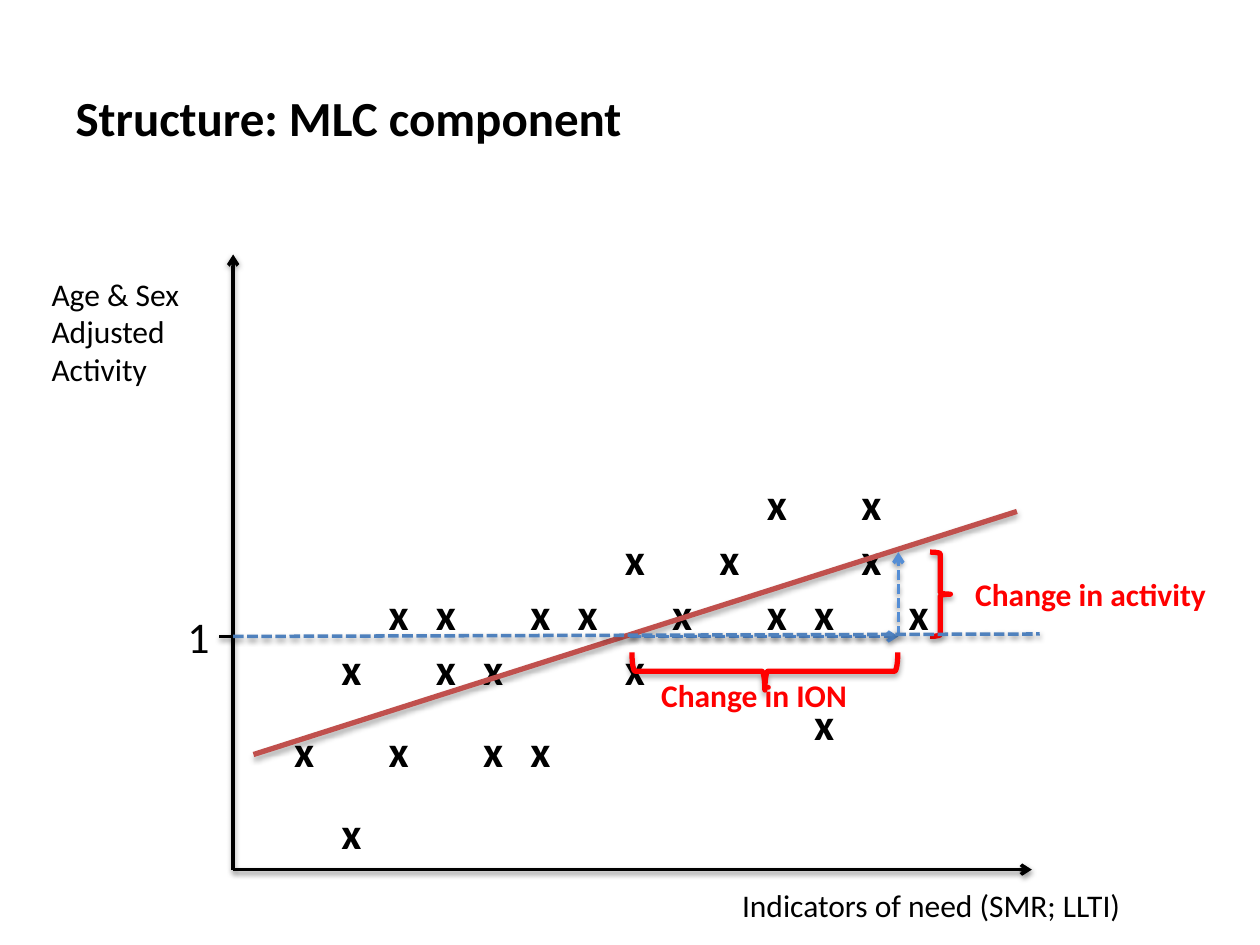
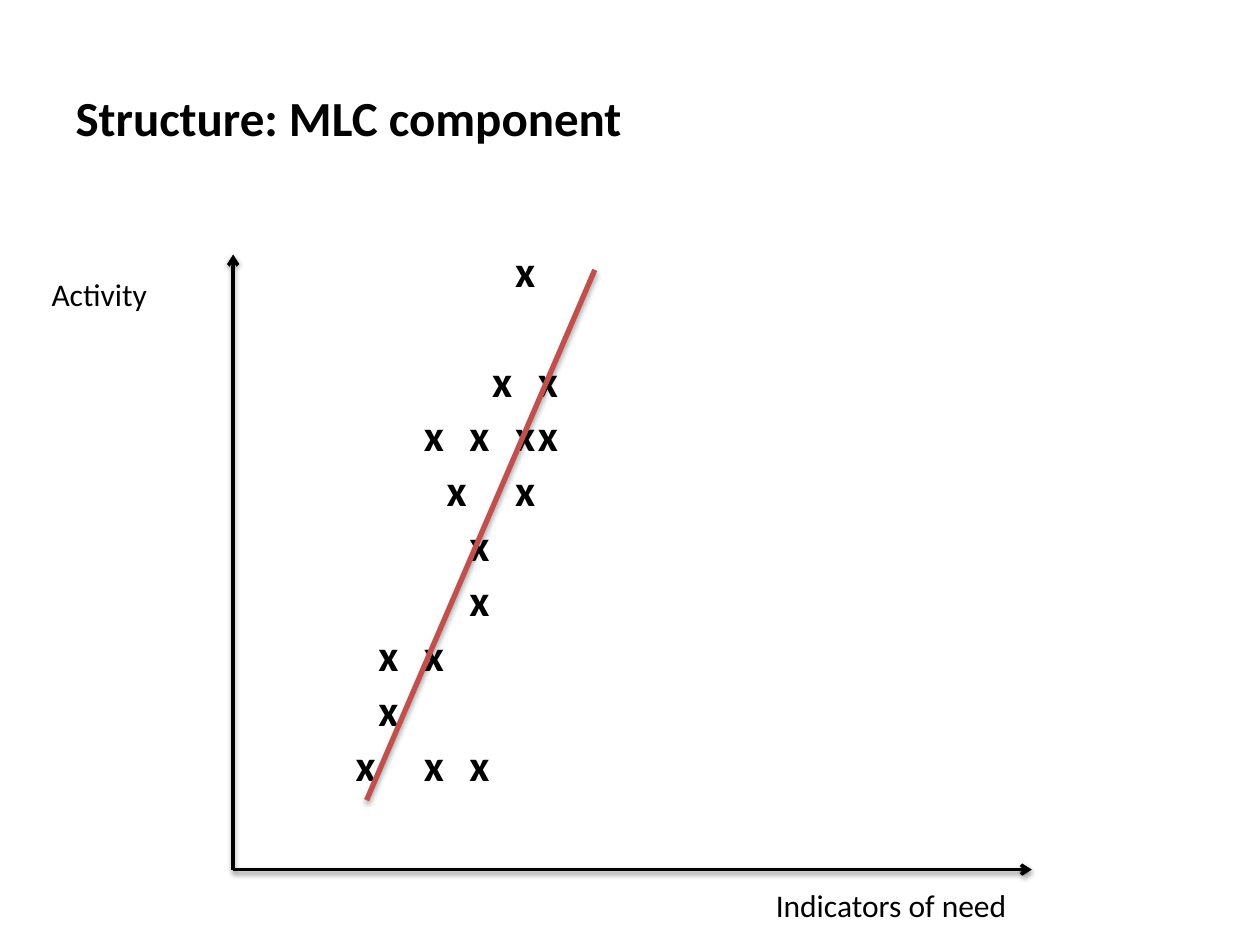
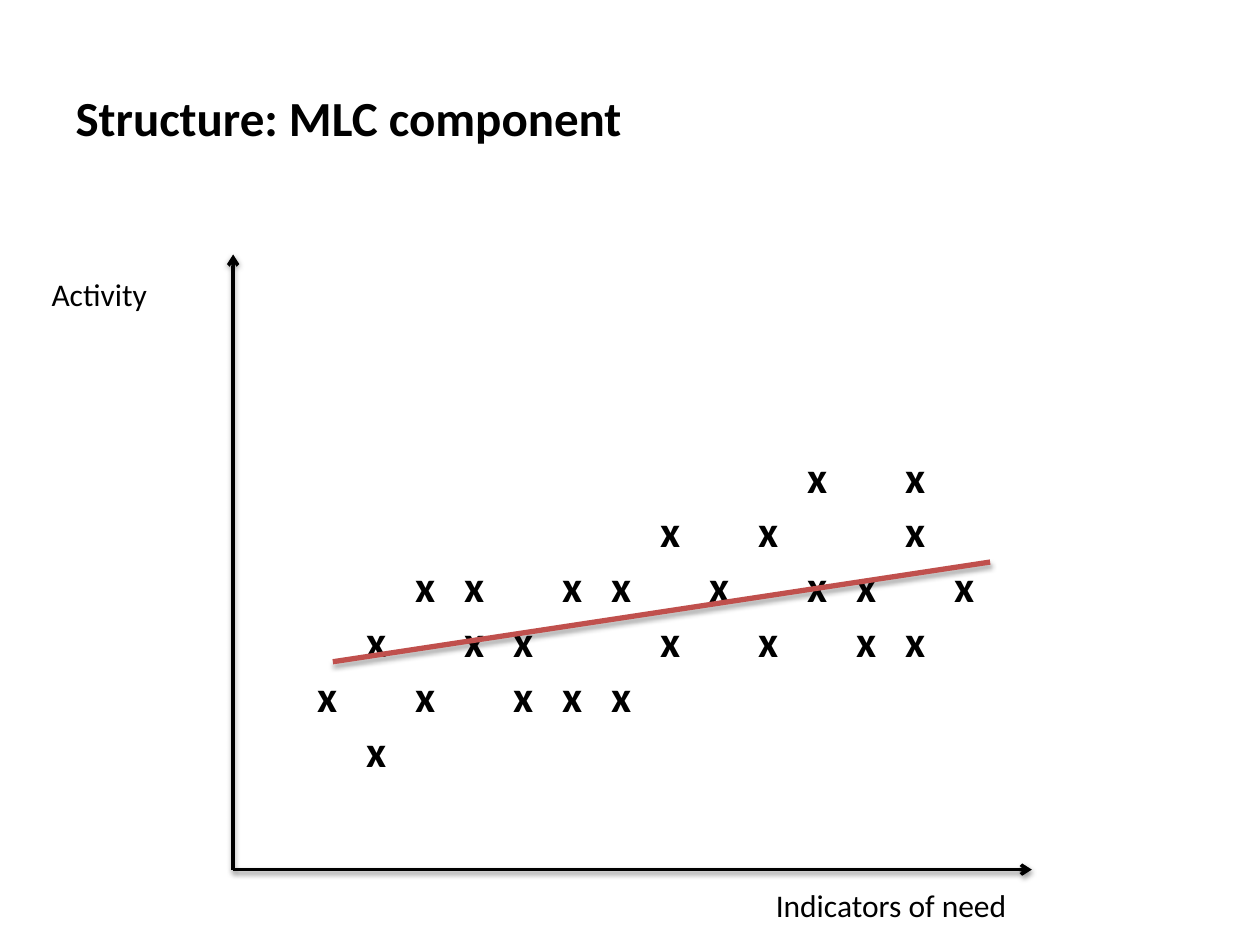
from lxml.etree import SubElement
from pptx import Presentation
from pptx.dml.color import RGBColor
from pptx.enum.dml import MSO_LINE
from pptx.enum.shapes import MSO_CONNECTOR, MSO_SHAPE
from pptx.enum.text import MSO_ANCHOR, MSO_AUTO_SIZE, PP_ALIGN
from pptx.oxml.ns import qn
from pptx.util import Cm, Pt

HUES = {"ink": "000000", "trend": "C0504D", "mean": "4F81BD",
        "shift": "558ED5", "note": "FF0000"}
FONT = "Calibri"
PLAIN = "{2D5ABB26-0587-4C30-8999-92F81FD0307C}"  # table style without grid
ROW = 1.1  # height of one text row in a scatter, cm

# Axes, cm
LEFT, BASE = 4.7, 17.53
TOP, RIGHT = 5.13, 20.8


class Deck:
    """Holds the style and the current slide."""

    def __init__(self):
        self.show = Presentation()
        self.show.slide_width, self.show.slide_height = Cm(25.4), Cm(19.05)
        self.slide = None

    def page(self, title):
        self.slide = self.show.slides.add_slide(self.show.slide_layouts[5])
        head = self.slide.shapes.title
        head.left, head.top, head.width, head.height = map(
            Cm, (1.27, 0.76, 22.86, 3.18))
        head.text_frame.vertical_anchor = MSO_ANCHOR.MIDDLE
        self.words(head.text_frame, title, 28, bold=True, align=PP_ALIGN.LEFT)

    def words(self, frame, text, size, hue="ink", bold=False, align=None):
        para = frame.paragraphs[0]
        para.alignment = align
        run = para.add_run()
        run.text = text
        font = run.font
        font.name, font.size, font.bold = FONT, Pt(size), bold
        font.color.rgb = RGBColor.from_string(HUES[hue])

    def label(self, text, box, size=18, hue="ink", bold=False):
        frame = self.slide.shapes.add_textbox(*map(Cm, box)).text_frame
        frame.word_wrap = True
        frame.auto_size = MSO_AUTO_SIZE.SHAPE_TO_FIT_TEXT
        self.words(frame, text, size, hue, bold)

    def stroke(self, shape, hue, width):
        """Set line and soft shadow; heavy lines get a deeper one."""
        shape.line.color.rgb = RGBColor.from_string(HUES[hue])
        shape.line.width = Pt(width)
        drop, alpha = (1.8, 35) if width > 2 else (1.6, 38)
        glow = SubElement(shape.element.spPr, qn("a:effectLst"))
        cast = SubElement(glow, qn("a:outerShdw"), blurRad=str(Pt(3.1)),
                          dist=str(Pt(drop)), dir="5400000", rotWithShape="0")
        tone = SubElement(cast, qn("a:srgbClr"), val=HUES["ink"])
        SubElement(tone, qn("a:alpha"), val=str(alpha * 1000))

    def line(self, start, end, hue="ink", width=2, dash=False, arrow=False):
        line = self.slide.shapes.add_connector(
            MSO_CONNECTOR.STRAIGHT, *map(Cm, start + end))
        self.stroke(line, hue, width)
        if dash:
            line.line.dash_style = MSO_LINE.SQUARE_DOT
        if arrow:
            edge = line.element.spPr.find(qn("a:ln"))
            SubElement(edge, qn("a:tailEnd"), type="arrow")

    def brace(self, kind, box, turn=0):
        brace = self.slide.shapes.add_shape(kind, *map(Cm, box))
        brace.rotation = turn
        brace.fill.background()
        self.stroke(brace, "note", 3)

    def scatter(self, rows, left, top, width,
                anchor=MSO_ANCHOR.MIDDLE, align=PP_ALIGN.CENTER):
        """Table of marks: x is centred, ^ sits at the top of a double row."""
        count = len(rows[0])
        frame = self.slide.shapes.add_table(
            len(rows), count, Cm(left), Cm(top), Cm(width), Cm(ROW * len(rows)))
        table = frame.table
        table.first_row = table.horz_banding = False
        frame.element.find(".//" + qn("a:tableStyleId")).text = PLAIN
        for col in table.columns:
            col.width = Cm(width / count)
        for i, marks in enumerate(rows):
            table.rows[i].height = Cm(ROW * (2 if "^" in marks else 1))
            for j, mark in enumerate(marks):
                cell = table.cell(i, j)
                cell.fill.background()
                cell.margin_left = cell.margin_right = cell.margin_top = Cm(0.03)
                cell.margin_bottom = 0
                cell.vertical_anchor = MSO_ANCHOR.TOP if mark == "^" else anchor
                if mark != ".":
                    self.words(cell.text_frame, "x", 25, bold=True, align=align)

    def trend(self, start, end):
        self.line(start, end, "trend", 3)

    def axes(self, up, across, left, high=1.02, wide=8):
        self.label(up, (0.79, 5.41, 3.61, high))
        self.line((LEFT, BASE), (LEFT, TOP), arrow=True)
        self.line((LEFT, BASE), (RIGHT, BASE), arrow=True)
        self.label(across, (left, 17.73, wide, 1.02))


def main():
    deck = Deck()
    title, need = "Structure: MLC component", "Indicators of need"

    # Slide 1: adjusted activity and the effect of a change in need
    deck.page(title)
    deck.scatter(["...........x.x.",
                  "........x.x..x.",
                  "...xx.xx.x.xx.x",
                  "..x.xx..x......",
                  ".x.x.xx.....^..",
                  "..x............"], 4.7, 9.63, 14.3)
    deck.trend((5.11, 15.21), (20.5, 10.31))
    mean, mid, far, rise = 12.83, 12.7, 18.11, 11.13
    deck.line((mid, mean), (far, mean), "shift", dash=True, arrow=True)
    deck.line((far, mean), (far, rise), "shift", dash=True, arrow=True)
    deck.brace(MSO_SHAPE.RIGHT_BRACE, (18.75, rise, 0.41, mean - rise))
    deck.brace(MSO_SHAPE.LEFT_BRACE, (15.04, 10.85, 0.76, 5.36), 270)
    deck.label("Change in ION", (13.08, 13.51, 4.57, 1.02),
               hue="note", bold=True)
    deck.label("Change in activity", (19.41, 11.46, 5.84, 1.02),
               hue="note", bold=True)
    deck.axes("Age & Sex Adjusted Activity", need + " (SMR; LLTI)",
              14.71, 2.57, 8.71)
    deck.line((LEFT, mean), (20.96, 12.78), "mean", dash=True)
    deck.label("1", (3.53, 12.17, 0.89, 1.32), 25)
    deck.line((LEFT, mean), (4.42, mean))

    # Slide 2: steep trend
    deck.page(title)
    deck.scatter(["........x..",
                  "...........",
                  ".......x.x.",
                  "....x.x.xx.",
                  ".....x..x..",
                  "......x....",
                  "......x....",
                  "..x.x......",
                  "..x........",
                  ".x..x.x....",
                  "..........."], 6.68, 4.93, 5.05,
                 MSO_ANCHOR.BOTTOM, PP_ALIGN.LEFT)
    deck.trend((7.39, 16.13), (11.99, 5.44))
    deck.axes("Activity", need, 15.39)

    # Slide 3: shallow trend
    deck.page(title)
    deck.scatter(["..........x.x.",
                  ".......x.x..x.",
                  "..xx.xx.x.xx.x",
                  ".x.xx..x.x.xx.",
                  "x.x.xxx.......",
                  ".x............"], 6.1, 9.07, 13.84)
    deck.trend((6.71, 13.34), (19.96, 11.33))
    deck.axes("Activity", need, 15.39)

    deck.show.save("out.pptx")


if __name__ == "__main__":
    main()
